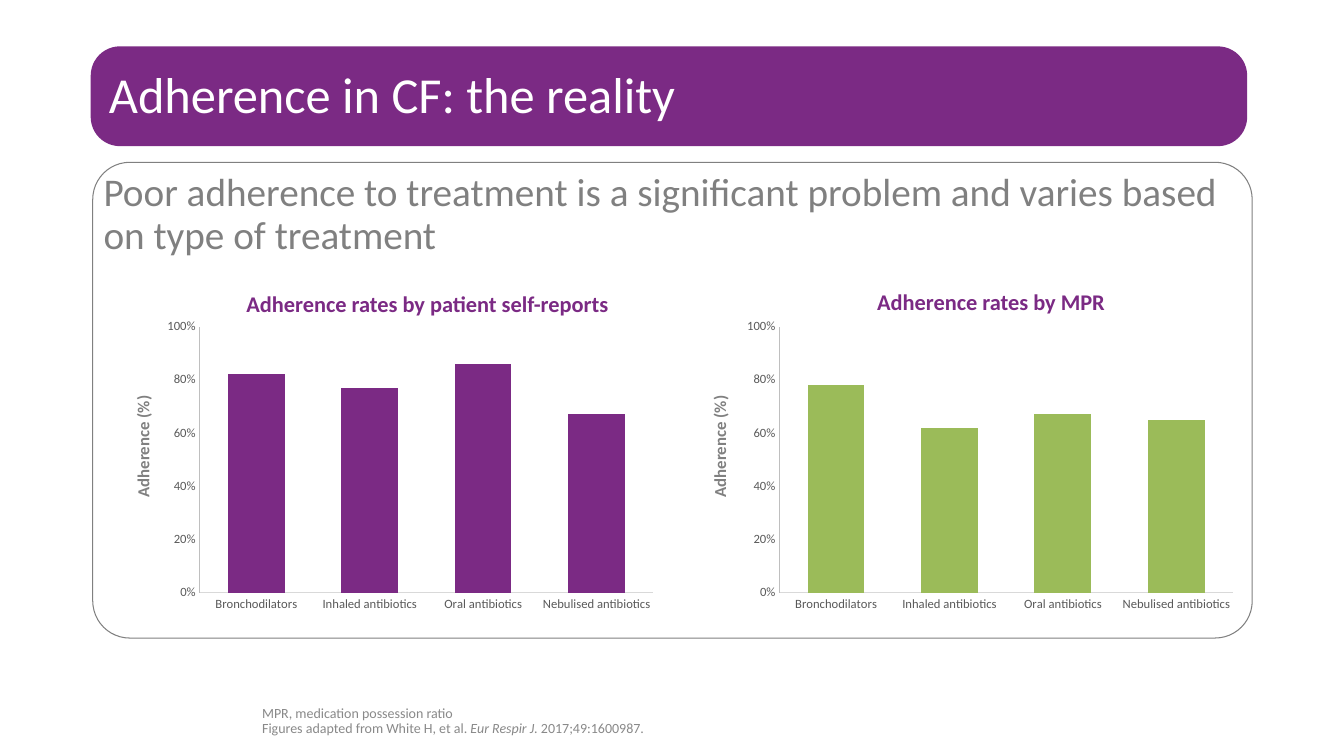
from lxml import etree
from pptx import Presentation
from pptx.chart.data import CategoryChartData
from pptx.dml.color import RGBColor
from pptx.enum.chart import XL_CHART_TYPE, XL_TICK_MARK
from pptx.enum.shapes import MSO_SHAPE
from pptx.enum.text import MSO_ANCHOR, PP_ALIGN
from pptx.oxml.ns import qn
from pptx.util import Inches, Pt

PURPLE = RGBColor(0x7B, 0x2A, 0x84)
GREEN = RGBColor(0x9B, 0xBB, 0x59)
WHITE = RGBColor(0xFF, 0xFF, 0xFF)
GREY = RGBColor(0x80, 0x80, 0x80)
NOTE_GREY = RGBColor(0x89, 0x89, 0x89)
LABEL_GREY = RGBColor(0x59, 0x59, 0x59)
CAT_LINE = RGBColor(0xD9, 0xD9, 0xD9)
VAL_LINE = RGBColor(0xBF, 0xBF, 0xBF)
FONT = "Calibri"
COLUMN = XL_CHART_TYPE.COLUMN_CLUSTERED
NO_TICK = XL_TICK_MARK.NONE
ROUNDED = MSO_SHAPE.ROUNDED_RECTANGLE
TOP, MIDDLE, BOTTOM = MSO_ANCHOR.TOP, MSO_ANCHOR.MIDDLE, MSO_ANCHOR.BOTTOM
LEFT, CENTER = PP_ALIGN.LEFT, PP_ALIGN.CENTER

TITLE = "Adherence in CF: the reality"
MESSAGE = ("Poor adherence to treatment is a significant problem "
           "and varies based on type of treatment")
ABBREVIATION = "MPR, medication possession ratio"
CITATION = [("Figures adapted from White H, et al. ", False),
            ("Eur Respir J. ", True), ("2017;49:1600987.", False)]
AXIS_TITLE = "Adherence (%)"
TREATMENTS = ["Bronchodilators", "Inhaled antibiotics",
              "Oral antibiotics", "Nebulised antibiotics"]
# heading, heading left and top, axis title left, chart left, colour, values
PANELS = [
    ("Adherence rates by patient self-reports", 2.05, 2.83, 0.26, 1.58,
     PURPLE, (0.82, 0.77, 0.86, 0.67)),
    ("Adherence rates by MPR", 7.64, 2.81, 5.98, 7.33,
     GREEN, (0.78, 0.62, 0.67, 0.65)),
]
CHART_TOP, CHART_W, CHART_H = 3.12, 5, 3
PLOT_AREA = {"x": 0.08, "y": 0.04, "w": 0.9, "h": 0.88}  # shares of the chart

prs = Presentation()
prs.slide_width, prs.slide_height = Inches(13.33), Inches(7.5)
s = prs.slides.add_slide(prs.slide_layouts[6])


def style(font, size, color, bold=False):
    font.name, font.size, font.bold = FONT, Pt(size), bold
    font.color.rgb = color


def box(*place):
    return s.shapes.add_textbox(*map(Inches, place))


def rounded(place, radius, fill=None, line=None):
    sp = s.shapes.add_shape(ROUNDED, *map(Inches, place))
    sp.shadow.inherit = False
    sp.adjustments[0] = radius
    if fill is None:
        sp.fill.background()
    else:
        sp.fill.solid()
        sp.fill.fore_color.rgb = fill
    if line is None:
        sp.line.fill.background()
    else:
        sp.line.color.rgb, sp.line.width = line, Pt(0.75)
    return sp


def write(sp, text, size, color, bold=False, align=LEFT, anchor=TOP,
          spacing=1.0, inset=True):
    """Set the first paragraph of a shape and return it."""
    tf = sp.text_frame
    tf.word_wrap, tf.vertical_anchor = True, anchor
    if not inset:
        tf.margin_left = tf.margin_right = tf.margin_top = tf.margin_bottom = 0
    p = tf.paragraphs[0]
    p.text, p.alignment, p.line_spacing = text, align, spacing
    style(p.font, size, color, bold)
    return p


def style_axis(axis, line):
    axis.major_tick_mark = axis.minor_tick_mark = NO_TICK
    axis.has_major_gridlines = False
    style(axis.tick_labels.font, 9, LABEL_GREY)
    axis.format.line.color.rgb, axis.format.line.width = line, Pt(0.75)


def fix_plot_area(chart):
    """Pin the inner plot area, so that both charts line up."""
    area = chart.plots[0]._element.getparent()
    for old in area.findall(qn("c:layout")):
        area.remove(old)
    layout = etree.Element(qn("c:layout"))
    area.insert(0, layout)
    manual = etree.SubElement(layout, qn("c:manualLayout"))
    settings = [("layoutTarget", "inner"), ("xMode", "edge"), ("yMode", "edge")]
    for tag, value in settings + list(PLOT_AREA.items()):
        etree.SubElement(manual, qn("c:" + tag)).set("val", str(value))


def add_adherence_chart(left, color, values):
    data = CategoryChartData(number_format="0%")
    data.categories = TREATMENTS
    data.add_series("Series 1", values)
    place = map(Inches, (left, CHART_TOP, CHART_W, CHART_H))
    chart = s.shapes.add_chart(COLUMN, *place, data).chart
    chart.has_legend = chart.has_title = False
    chart.font.name, chart.font.size = FONT, Pt(10)
    plot = chart.plots[0]
    plot.gap_width, plot.vary_by_categories = 100, False
    fill = plot.series[0].format.fill
    fill.solid()
    fill.fore_color.rgb = color
    style_axis(chart.category_axis, CAT_LINE)
    axis = chart.value_axis
    style_axis(axis, VAL_LINE)
    axis.minimum_scale, axis.maximum_scale, axis.major_unit = 0, 1, 0.2
    axis.tick_labels.number_format = "0%"
    axis.tick_labels.number_format_is_linked = False
    fix_plot_area(chart)


rounded((0.9, 0.46, 11.47, 0.99), 0.293, fill=PURPLE)
write(box(1.08, 0.62, 11.18, 0.72), TITLE, 36, WHITE,
      anchor=MIDDLE, spacing=0.8, inset=False)
write(rounded((0.92, 1.61, 11.5, 4.72), 0.078, line=GREY), MESSAGE, 28, GREY,
      spacing=0.9, inset=False)

note = write(box(2.6, 6.46, 9.82, 0.85), ABBREVIATION, 10, NOTE_GREY,
             anchor=BOTTOM, spacing=0.9, inset=False)
note.add_line_break()
for text, italic in CITATION:
    r = note.add_run()
    r.text, r.font.italic = text, italic

for heading, head_left, head_top, axis_left, chart_left, color, values in PANELS:
    write(box(head_left, head_top, 4.38, 0.37), heading, 16, PURPLE,
          bold=True, align=CENTER)
    add_adherence_chart(chart_left, color, values)
    label = box(axis_left, 4.28, 2.31, 0.3)
    label.rotation = 270
    write(label, AXIS_TITLE, 12, GREY, bold=True, align=CENTER)

prs.save("out.pptx")
